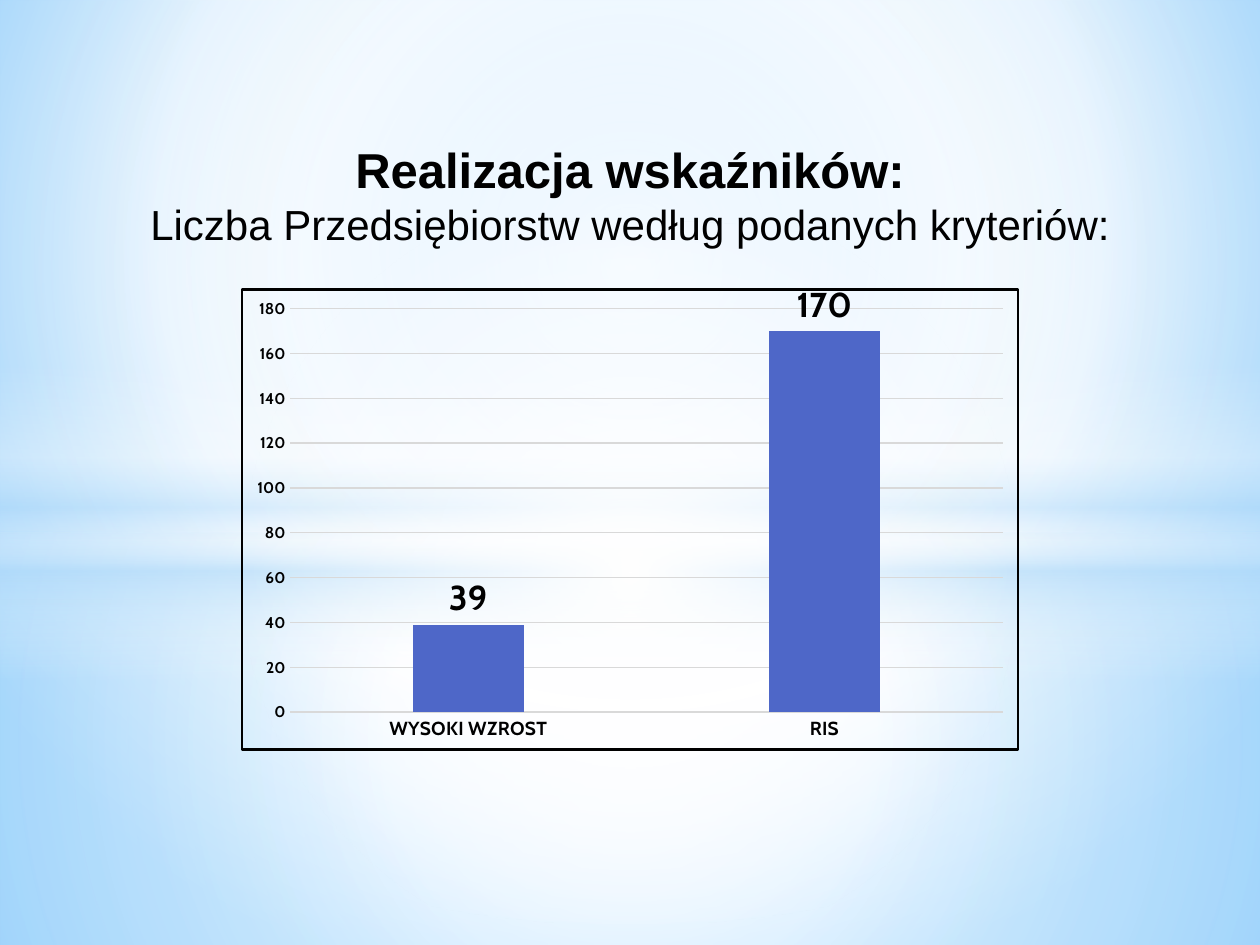
from dataclasses import dataclass

from lxml.etree import SubElement
from pptx import Presentation
from pptx.chart.data import CategoryChartData
from pptx.dml.color import RGBColor
from pptx.enum.chart import XL_CHART_TYPE, XL_LABEL_POSITION, XL_TICK_MARK
from pptx.enum.shapes import MSO_SHAPE
from pptx.enum.text import MSO_ANCHOR, PP_ALIGN
from pptx.oxml.ns import qn
from pptx.util import Pt


@dataclass(frozen=True)
class Theme:
    ink: str = "000000"
    bar: str = "4E67C8"
    grid: str = "D9D9D9"
    white: str = "FFFFFF"
    haze: str = "B4DCFA"
    sky: str = "9ED5FF"
    deep_sky: str = "5BB9FF"
    heading_font: str = "Arial"
    chart_font: str = "Cabin"
    heading_size: int = 28
    subheading_size: int = 24
    value_size: int = 20
    category_size: int = 11
    chart_size: int = 10
    scale_size: int = 9


THEME = Theme()
WIDTH, HEIGHT = 720, 540
CENTRE = (50, 50, 50, 50)


def style_font(font, name, size, bold):
    font.name, font.size, font.bold = name, Pt(size), bold
    font.color.rgb = RGBColor.from_string(THEME.ink)


def style_line(line, color, width):
    line.color.rgb = RGBColor.from_string(color)
    line.width = Pt(width)


def replace_with_gradient(properties, stops, focus=None):
    """Swap a solid fill for a gradient: circular around focus, else downward."""
    solid = properties.find(qn("a:solidFill"))
    gradient = SubElement(properties, qn("a:gradFill"), rotWithShape="1")
    properties.replace(solid, gradient)
    stop_list = SubElement(gradient, qn("a:gsLst"))
    for position, color, opacity in stops:
        stop = SubElement(stop_list, qn("a:gs"), pos=str(position * 1000))
        tint = SubElement(stop, qn("a:srgbClr"), val=color)
        if opacity < 100:
            SubElement(tint, qn("a:alpha"), val=str(opacity * 1000))
    if focus:
        circle = SubElement(gradient, qn("a:path"), path="circle")
        edges = {side: str(share * 1000) for side, share in zip("ltrb", focus)}
        SubElement(circle, qn("a:fillToRect"), edges)
    else:
        SubElement(gradient, qn("a:lin"), ang="5400000", scaled="0")


def add_glow(slide, preset, top, height, stops, focus=None):
    glow = slide.shapes.add_shape(preset, 0, Pt(top), Pt(WIDTH), Pt(height))
    glow.shadow.inherit = False
    glow.line.fill.background()
    glow.fill.solid()
    replace_with_gradient(glow.element.spPr, stops, focus)


def add_backdrop(slide):
    white, haze = THEME.white, THEME.haze
    slide.background.fill.solid()
    replace_with_gradient(
        slide.element.find(".//" + qn("p:bgPr")),
        [(0, THEME.sky, 100), (60, white, 100), (100, THEME.deep_sky, 100)],
        (20, 10, 20, 60))

    # Lower and upper halves meet at the horizon
    horizon = 304.5
    add_glow(slide, MSO_SHAPE.RECTANGLE, horizon, HEIGHT - horizon,
             [(0, white, 91), (37, white, 76), (100, haze, 79)], CENTRE)
    add_glow(slide, MSO_SHAPE.RECTANGLE, 0, horizon,
             [(0, white, 89), (48, white, 62), (100, haze, 79)], CENTRE)

    # Band of light and central glow
    add_glow(slide, MSO_SHAPE.RECTANGLE, 209, 180,
             [(0, white, 0), (29, white, 30), (45, haze, 40),
              (55, white, 26), (65, haze, 60), (100, white, 0)])
    add_glow(slide, MSO_SHAPE.OVAL, 126, 402,
             [(0, white, 100), (54, white, 0)], CENTRE)


def add_heading(slide, lines):
    title = slide.shapes.title
    slide.shapes.element.append(title.element)  # in front of the backdrop
    title.left, title.top, title.width, title.height = 0, Pt(75.6), Pt(WIDTH), Pt(70.6)
    frame = title.text_frame
    frame.word_wrap = True
    frame.vertical_anchor = MSO_ANCHOR.MIDDLE
    frame.text = "\n".join(text for text, _, _ in lines)
    for paragraph, (_, size, bold) in zip(frame.paragraphs, lines):
        paragraph.alignment = PP_ALIGN.CENTER
        style_font(paragraph.font, THEME.heading_font, size, bold)


def add_border(chart, color, width):
    properties = SubElement(chart.element, qn("c:spPr"))
    chart.element.find(qn("c:chart")).addnext(properties)
    SubElement(properties, qn("a:noFill"))
    line = SubElement(properties, qn("a:ln"), w=str(Pt(width)))
    fill = SubElement(line, qn("a:solidFill"))
    SubElement(fill, qn("a:srgbClr"), val=color)


def style_axis(axis, size):
    axis.major_tick_mark = axis.minor_tick_mark = XL_TICK_MARK.NONE
    style_font(axis.tick_labels.font, THEME.chart_font, size, True)


def add_company_chart(slide, counts):
    data = CategoryChartData()
    data.categories = list(counts)
    data.add_series("Series 1", list(counts.values()))
    chart = slide.shapes.add_chart(
        XL_CHART_TYPE.COLUMN_CLUSTERED,
        Pt(137.5), Pt(162), Pt(445), Pt(267), data).chart
    chart.has_title = chart.has_legend = False
    style_font(chart.font, THEME.chart_font, THEME.chart_size, False)
    add_border(chart, THEME.ink, 1.5)

    # Axes
    style_axis(chart.category_axis, THEME.category_size)
    style_line(chart.category_axis.format.line, THEME.grid, 0.75)
    scale = chart.value_axis
    style_axis(scale, THEME.scale_size)
    scale.minimum_scale, scale.maximum_scale, scale.major_unit = 0, 180, 20
    scale.format.line.fill.background()
    style_line(scale.major_gridlines.format.line, THEME.grid, 0.75)

    # Columns and their values
    plot = chart.plots[0]
    plot.gap_width, plot.overlap, plot.vary_by_categories = 219, -27, False
    columns = plot.series[0]
    columns.format.fill.solid()
    columns.format.fill.fore_color.rgb = RGBColor.from_string(THEME.bar)
    labels = columns.data_labels
    labels.show_value = True
    labels.position = XL_LABEL_POSITION.OUTSIDE_END
    style_font(labels.font, THEME.chart_font, THEME.value_size, True)


def main():
    deck = Presentation()
    deck.slide_width, deck.slide_height = Pt(WIDTH), Pt(HEIGHT)
    slide = deck.slides.add_slide(deck.slide_layouts[5])
    add_backdrop(slide)
    add_heading(slide, [
        ("Realizacja wskaźników:", THEME.heading_size, True),
        ("Liczba Przedsiębiorstw według podanych kryteriów:",
         THEME.subheading_size, False),
    ])
    add_company_chart(slide, {"WYSOKI WZROST": 39, "RIS": 170})
    deck.save("out.pptx")


if __name__ == "__main__":
    main()
